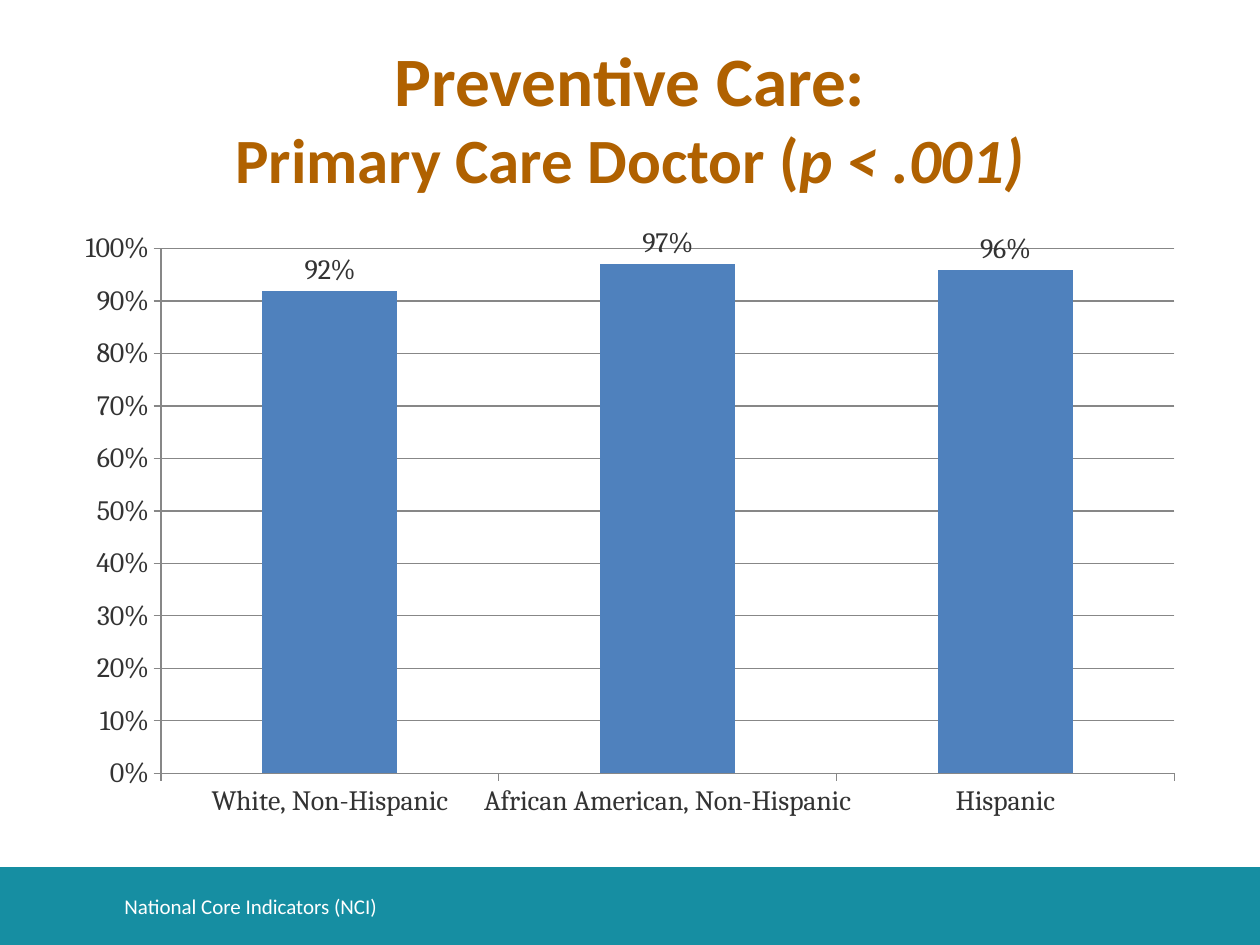
from pptx import Presentation
from pptx.chart.data import CategoryChartData
from pptx.dml.color import RGBColor
from pptx.enum.chart import XL_CHART_TYPE as ChartType
from pptx.enum.chart import XL_LABEL_POSITION as LabelPosition
from pptx.enum.chart import XL_TICK_MARK as TickMark
from pptx.enum.shapes import MSO_SHAPE as Shape
from pptx.enum.text import MSO_ANCHOR as Anchor
from pptx.enum.text import PP_ALIGN as Align
from pptx.util import Cm, Pt

TEAL = RGBColor(0x16, 0x8E, 0xA2)
ORANGE = RGBColor(0xB0, 0x61, 0x00)
WHITE = RGBColor(0xFF, 0xFF, 0xFF)
BLUE = RGBColor(0x4F, 0x81, 0xBD)
DARK = RGBColor(0x33, 0x33, 0x33)
GRAY = RGBColor(0x87, 0x87, 0x87)


class SlideBuilder:
    text_font = "Calibri"
    chart_font = "Cambria"
    chart_size = Pt(16)

    def __init__(self, slide):
        self.slide = slide

    def band(self, left, top, width, height, color):
        shape = self.slide.shapes.add_shape(
            Shape.RECTANGLE, Cm(left), Cm(top), Cm(width), Cm(height))
        shape.shadow.inherit = False
        shape.fill.solid()
        shape.fill.fore_color.rgb = color
        shape.line.fill.background()

    def text(self, left, top, width, height, lines, color, align=Align.LEFT, bold=False):
        """Each line is a list of (text, size, italic) runs."""
        box = self.slide.shapes.add_textbox(Cm(left), Cm(top), Cm(width), Cm(height))
        frame = box.text_frame
        frame.word_wrap = True
        frame.vertical_anchor = Anchor.MIDDLE
        paragraph = frame.paragraphs[0]
        paragraph.alignment = align
        for index, runs in enumerate(lines):
            if index:
                paragraph.add_line_break()
            for text, size, italic in runs:
                run = paragraph.add_run()
                run.text = text
                run.font.name = self.text_font
                run.font.size = Pt(size)
                run.font.bold = bold
                run.font.italic = italic
                run.font.color.rgb = color

    def style_font(self, font):
        font.name = self.chart_font
        font.size = self.chart_size
        font.color.rgb = DARK

    def column_chart(self, left, top, width, height, values):
        data = CategoryChartData(number_format="0%")
        data.categories = list(values)
        data.add_series("Series 1", list(values.values()))
        chart = self.slide.shapes.add_chart(
            ChartType.COLUMN_CLUSTERED, Cm(left), Cm(top), Cm(width), Cm(height), data).chart
        chart.has_legend = False
        chart.has_title = False
        self.style_font(chart.font)

        # Axes and gridlines
        for axis in (chart.category_axis, chart.value_axis):
            axis.major_tick_mark = TickMark.OUTSIDE
            axis.minor_tick_mark = TickMark.NONE
            axis.format.line.color.rgb = GRAY
            self.style_font(axis.tick_labels.font)
        value_axis = chart.value_axis
        value_axis.minimum_scale = 0
        value_axis.maximum_scale = 1
        value_axis.major_unit = 0.1
        value_axis.tick_labels.number_format = "0%"
        value_axis.tick_labels.number_format_is_linked = False
        value_axis.has_major_gridlines = True
        value_axis.major_gridlines.format.line.color.rgb = GRAY

        # Columns and their labels
        plot = chart.plots[0]
        plot.vary_by_categories = False
        plot.gap_width = 150
        series = plot.series[0]
        series.format.fill.solid()
        series.format.fill.fore_color.rgb = BLUE
        labels = series.data_labels
        labels.show_value = True
        labels.position = LabelPosition.OUTSIDE_END
        labels.number_format = "0%"
        labels.number_format_is_linked = False
        self.style_font(labels.font)


def main():
    presentation = Presentation()
    presentation.slide_width = Cm(25.4)
    presentation.slide_height = Cm(19.05)
    builder = SlideBuilder(presentation.slides.add_slide(presentation.slide_layouts[6]))

    # Footer
    builder.band(0, 17.48, 25.4, 1.57, TEAL)
    builder.text(2.26, 17.75, 18.8, 1.02,
                 [[("National Core Indicators (NCI)", 12, False)]], WHITE)

    # Title
    builder.text(1.27, 0.76, 22.86, 3.18,
                 [[("Preventive Care:", 39.6, False)],
                  [("Primary Care Doctor (", 36, False), ("p < .001)", 36, True)]],
                 ORANGE, Align.CENTER, bold=True)

    # Chart
    builder.column_chart(1.27, 4.45, 22.86, 12.27, {
        "White, Non-Hispanic": 0.92,
        "African American, Non-Hispanic": 0.97,
        "Hispanic": 0.96,
    })

    presentation.save("out.pptx")


if __name__ == "__main__":
    main()
